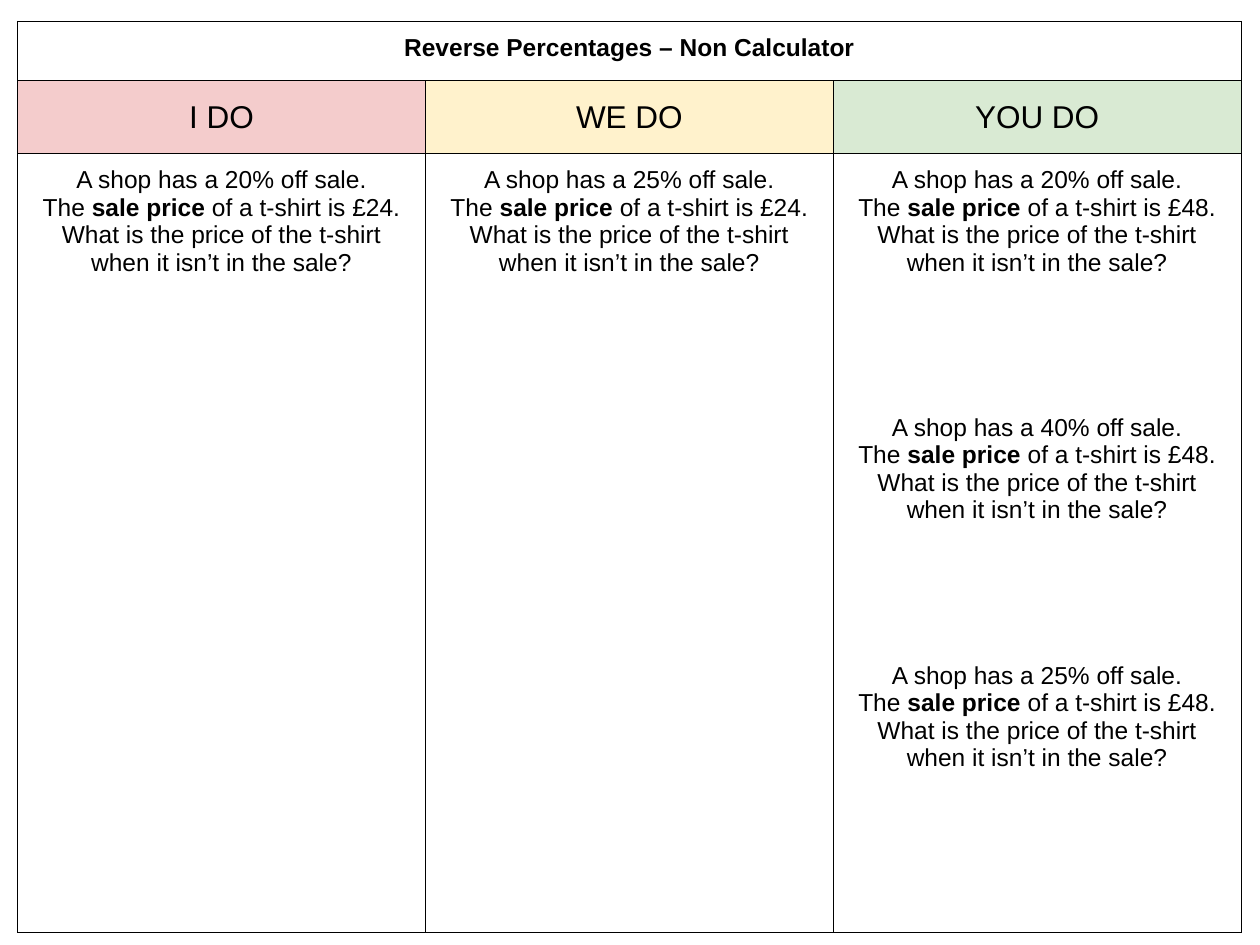
from lxml.etree import SubElement
from pptx import Presentation
from pptx.dml.color import RGBColor as RGB
from pptx.enum.text import MSO_ANCHOR as Anchor, PP_ALIGN as Align
from pptx.oxml.ns import qn
from pptx.util import Inches, Pt

COLORS = {"ink": "000000", "i": "F4CCCC", "we": "FFF2CC", "you": "D9EAD3"}
HEADS = [("I DO", "i"), ("WE DO", "we"), ("YOU DO", "you")]
# Percent off and sale price of each question, by column
TASKS = [[(20, 24)], [(25, 24)], [(20, 48), (40, 48), (25, 48)]]
WIDTH = 9.71
ROWS = [0.47, 0.58, 6.18]
GAP = Pt(78.7)


def add_border(cell):
    props = cell._tc.get_or_add_tcPr()
    for side in ("lnL", "lnR", "lnT", "lnB"):
        line = SubElement(props, qn("a:" + side), w=str(Pt(0.75)))
        fill = SubElement(line, qn("a:solidFill"))
        SubElement(fill, qn("a:srgbClr"), val=COLORS["ink"])


def style_cell(cell, fill=None):
    add_border(cell)
    cell.margin_left = cell.margin_right = Inches(0.1)
    cell.margin_top = cell.margin_bottom = Inches(0.1)
    if fill:
        cell.fill.solid()
        cell.fill.fore_color.rgb = RGB.from_string(COLORS[fill])
    else:
        cell.fill.background()


def style_run(run, size, bold=False):
    font = run.font
    font.name, font.size, font.bold = "Arial", Pt(size), bold
    font.color.rgb = RGB.from_string(COLORS["ink"])


def add_runs(para, parts, size=14):
    """Fill a centred paragraph from (text, bold) pairs."""
    para.alignment = Align.CENTER
    for text, bold in parts:
        run = para.add_run()
        run.text = text
        style_run(run, size, bold)


def add_tasks(cell, tasks):
    frame = cell.text_frame
    for num, (off, price) in enumerate(tasks):
        first = frame.add_paragraph() if num else frame.paragraphs[0]
        if num:
            first.space_before = GAP
        add_runs(first, [(f"A shop has a {off}% off sale.", False)])
        add_runs(frame.add_paragraph(), [
            ("The ", False), ("sale price", True),
            (f" of a t-shirt is £{price}.", False)])
        add_runs(frame.add_paragraph(), [
            ("What is the price of the t-shirt when it isn’t in the sale?", False)])


def add_grid(slide):
    grid = slide.shapes.add_table(
        len(ROWS), len(HEADS), Inches(0.14), Inches(0.17),
        Inches(WIDTH), Inches(sum(ROWS))).table
    grid.first_row = grid.horz_banding = False
    for row, height in zip(grid.rows, ROWS):
        row.height = Inches(height)
    return grid


def main():
    prs = Presentation()
    prs.slide_width, prs.slide_height = Inches(10), Inches(7.5)
    slide = prs.slides.add_slide(prs.slide_layouts[6])
    grid = add_grid(slide)

    for col, ((name, color), tasks) in enumerate(zip(HEADS, TASKS)):
        title, head, body = (grid.cell(row, col) for row in range(3))
        style_cell(title)
        style_cell(head, color)
        style_cell(body)
        head.vertical_anchor = Anchor.MIDDLE
        add_runs(head.text_frame.paragraphs[0], [(name, False)], 18)
        add_tasks(body, tasks)

    top = grid.cell(0, 0)
    top.merge(grid.cell(0, 2))
    add_runs(top.text_frame.paragraphs[0],
             [("Reverse Percentages – Non Calculator", True)])
    prs.save("out.pptx")


if __name__ == "__main__":
    main()
